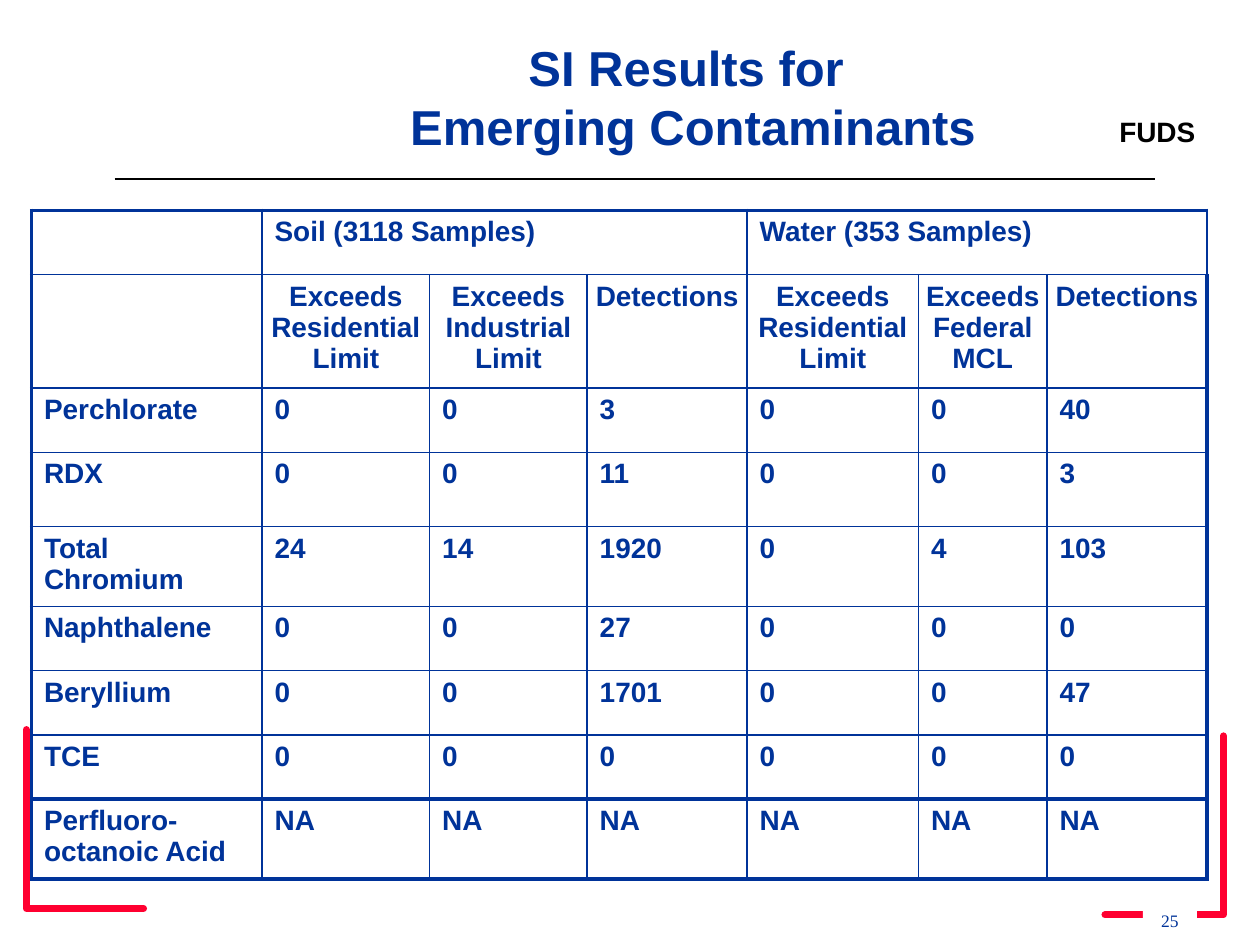
from lxml import etree
from pptx import Presentation
from pptx.dml.color import RGBColor
from pptx.enum import shapes, text
from pptx.oxml import ns
from pptx.util import Inches, Pt

COLORS = {"navy": "003399", "red": "FF0030", "black": "000000", "white": "FFFFFF"}
THIN, THICK = 1, 2.25
CENTER, LEFT = text.PP_ALIGN.CENTER, text.PP_ALIGN.LEFT

COLUMN_WIDTHS = [1.83, 1.33, 1.25, 1.27, 1.36, 1.02, 1.27]
ROW_HEIGHTS = [0.51, 0.9, 0.51, 0.59, 0.63, 0.51, 0.51, 0.51, 0.63]
ROWS = [
    ["", "Soil (3118 Samples)", "", "", "Water (353 Samples)", "", ""],
    ["", "Exceeds\nResidential\nLimit", "Exceeds\nIndustrial Limit", "Detections",
     "Exceeds Residential Limit", "Exceeds Federal MCL", "Detections"],
    ["Perchlorate", "0", "0", "3", "0", "0", "40"],
    ["RDX", "0", "0", "11", "0", "0", "3"],
    ["Total Chromium", "24", "14", "1920", "0", "4", "103"],
    ["Naphthalene", "0", "0", "27", "0", "0", "0"],
    ["Beryllium", "0", "0", "1701", "0", "0", "47"],
    ["TCE", "0", "0", "0", "0", "0", "0"],
    ["Perfluoro-octanoic Acid"] + ["NA"] * 6,
]


def rgb(name):
    return RGBColor.from_string(COLORS[name])


class SlideBuilder:
    def __init__(self, slide, font="Arial"):
        self.slide = slide
        self.font = font

    def set_text(self, text_frame, content, size, color="navy", align=CENTER, bold=True, font=None):
        text_frame.text = content
        text_frame.word_wrap = True
        for paragraph in text_frame.paragraphs:
            paragraph.alignment = align
            for run in paragraph.runs:
                run.font.name = font or self.font
                run.font.size = Pt(size)
                run.font.bold = bold
                run.font.color.rgb = rgb(color)

    def text_box(self, box, content, size, color="navy", inset=None):
        shape = self.slide.shapes.add_textbox(*map(Inches, box))
        frame = shape.text_frame
        if inset is not None:
            frame.margin_left = frame.margin_right = Inches(inset)
            frame.margin_top = frame.margin_bottom = Inches(inset)
        self.set_text(frame, content, size, color)

    def corner(self, points):
        start, *rest = [(Inches(x), Inches(y)) for x, y in points]
        builder = self.slide.shapes.build_freeform(*start)
        builder.add_line_segments(rest, close=False)
        shape = builder.convert_to_shape()
        shape.shadow.inherit = False
        shape.fill.background()
        shape.line.color.rgb = rgb("red")
        shape.line.width = Pt(4)
        outline = shape._element.spPr.find(ns.qn("a:ln"))
        outline.set("cap", "rnd")
        etree.SubElement(outline, ns.qn("a:round"))

    def rule(self, left, right, top):
        line = self.slide.shapes.add_connector(
            shapes.MSO_CONNECTOR.STRAIGHT, Inches(left), Inches(top), Inches(right), Inches(top))
        line.line.color.rgb = rgb("black")
        line.line.width = Pt(1)
        etree.SubElement(line._element.spPr, ns.qn("a:effectLst"))

    def page_number(self, box, number):
        shape = self.slide.shapes.add_shape(shapes.MSO_SHAPE.RECTANGLE, *map(Inches, box))
        shape.shadow.inherit = False
        shape.fill.solid()
        shape.fill.fore_color.rgb = rgb("white")
        shape.line.fill.background()
        shape.text_frame.vertical_anchor = text.MSO_ANCHOR.TOP
        self.set_text(shape.text_frame, number, 10, bold=False, font="Times New Roman")

    def border(self, cell, side, width):
        properties = cell._tc.get_or_add_tcPr()
        line = etree.SubElement(properties, ns.qn(f"a:ln{side}"), w=str(Pt(width)))
        fill = etree.SubElement(line, ns.qn("a:solidFill"))
        etree.SubElement(fill, ns.qn("a:srgbClr"), val=COLORS["navy"])

    def table(self, left, top):
        last_row, last_column = len(ROWS) - 1, len(COLUMN_WIDTHS) - 1
        table = self.slide.shapes.add_table(
            len(ROWS), len(COLUMN_WIDTHS), Inches(left), Inches(top),
            Inches(sum(COLUMN_WIDTHS)), Inches(sum(ROW_HEIGHTS))).table
        table.first_row = table.horz_banding = False
        for column, width in zip(table.columns, COLUMN_WIDTHS):
            column.width = Inches(width)
        for row, height in zip(table.rows, ROW_HEIGHTS):
            row.height = Inches(height)
        for column in (1, 4):
            table.cell(0, column).merge(table.cell(0, column + 2))
        for r, values in enumerate(ROWS):
            for c, value in enumerate(values):
                cell = table.cell(r, c)
                heading = r == 1 and c > 0
                if heading:
                    cell.margin_left = cell.margin_right = Inches(0.05)
                if value:
                    self.set_text(cell.text_frame, value, 16, align=CENTER if heading else LEFT)
                thick_sides = {"L": c == 0, "R": c == last_column,
                               "T": r in (0, last_row), "B": r >= last_row - 1}
                for side, thick in thick_sides.items():
                    self.border(cell, side, THICK if thick else THIN)
                cell.fill.background()


def main():
    presentation = Presentation()
    presentation.slide_width, presentation.slide_height = Inches(10), Inches(7.5)
    builder = SlideBuilder(presentation.slides.add_slide(presentation.slide_layouts[6]))
    builder.corner([(0.21, 5.79), (0.21, 7.21), (1.14, 7.21)])
    builder.corner([(9.71, 5.84), (9.71, 7.26), (8.77, 7.26)])
    builder.page_number((9.07, 7.17, 0.43, 0.26), "25")
    builder.rule(0.91, 9.17, 1.42)
    builder.text_box((8.83, 0.91, 0.71, 0.27), "FUDS", 16, "black", inset=0)
    builder.text_box((2.5, 0.25, 6, 1.03), "SI Results for \nEmerging Contaminants", 28)
    builder.table(0.25, 1.67)
    presentation.save("out.pptx")


if __name__ == "__main__":
    main()
